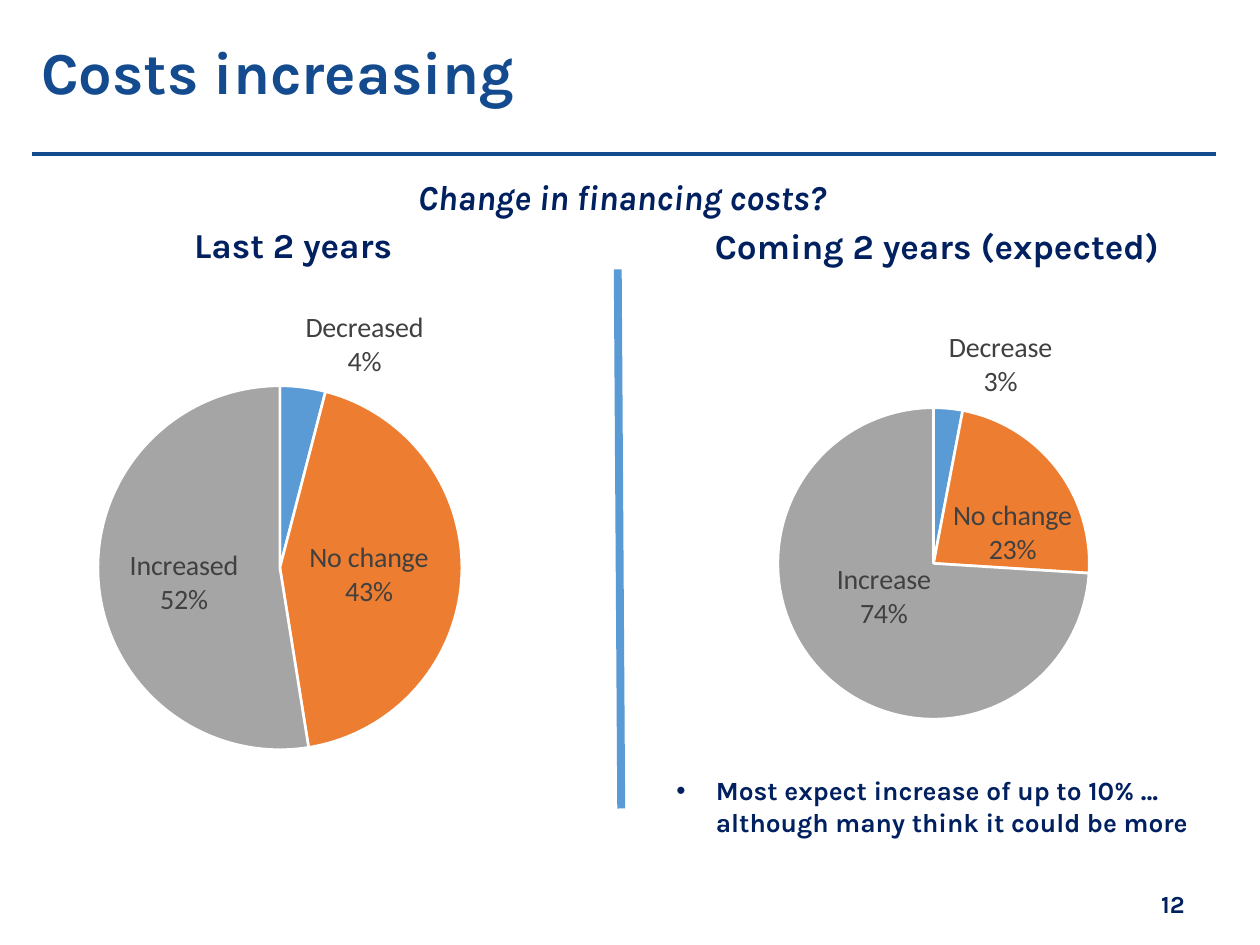
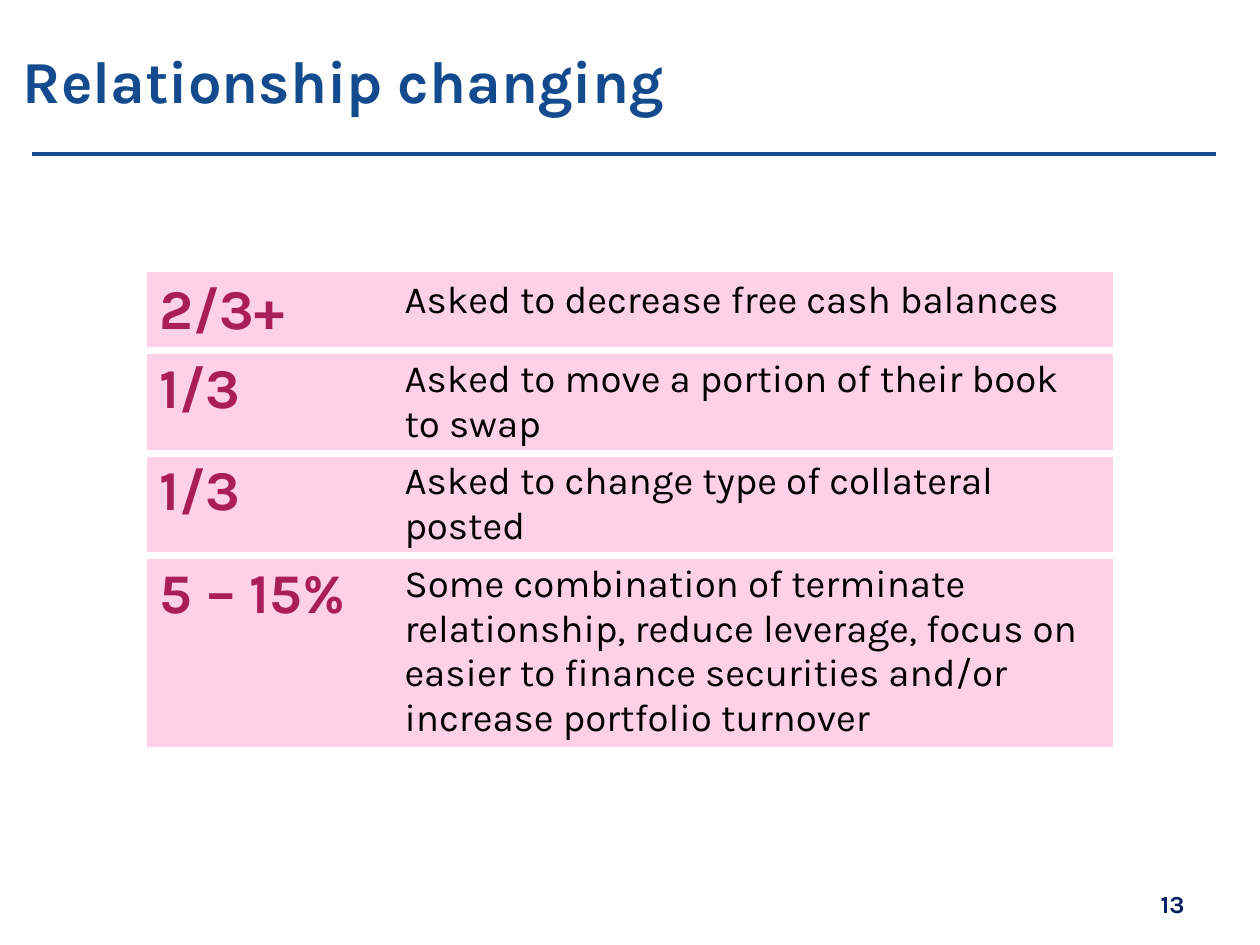
import copy
import dataclasses

import lxml.etree
import pptx
import pptx.chart.data
import pptx.dml.color
import pptx.enum.chart
import pptx.enum.shapes
import pptx.enum.text
import pptx.oxml
import pptx.oxml.ns
import pptx.util

Pt = pptx.util.Pt
qn = pptx.oxml.ns.qn
Align = pptx.enum.text.PP_ALIGN
LabelPosition = pptx.enum.chart.XL_LABEL_POSITION


@dataclasses.dataclass(frozen=True)
class Theme:
    """Colours, fonts and type sizes shared by the slides."""

    title: str = "134B8E"
    navy: str = "002060"
    divider: str = "5B9BD5"
    slices: tuple = ("5B9BD5", "ED7D31", "A5A5A5")
    label: str = "404040"
    berry: str = "A91E59"
    pink: str = "FFD1E8"
    white: str = "FFFFFF"
    black: str = "000000"
    font: str = "Karla"
    chart_font: str = "Calibri"
    title_size: int = 34
    share_size: int = 32
    request_size: int = 22
    heading_size: int = 20
    label_size: int = 16
    note_size: int = 15
    number_size: int = 14


THEME = Theme()


def rgb(colour):
    """Turn a hex string into a colour."""
    return pptx.dml.color.RGBColor.from_string(colour)


def style(font, size, colour, bold=False, italic=False, name=THEME.font):
    """Set the look of a font."""
    font.name, font.size, font.bold, font.italic = name, Pt(size), bold, italic
    font.color.rgb = rgb(colour)


def add_text(page, box, text, size, colour, align=Align.LEFT, italic=False, middle=False):
    """Add one bold paragraph in a box and return the paragraph."""
    frame = page.shapes.add_textbox(*map(Pt, box)).text_frame
    frame.text = text
    frame.word_wrap = True
    if middle:
        frame.vertical_anchor = pptx.enum.text.MSO_ANCHOR.MIDDLE
    para = frame.paragraphs[0]
    para.alignment = align
    for span in para.runs:
        style(span.font, size, colour, True, italic)
    return para


def add_line(page, start, end, colour, width):
    """Add a straight line without shadow."""
    line = page.shapes.add_connector(
        pptx.enum.shapes.MSO_CONNECTOR.STRAIGHT, *map(Pt, (*start, *end))
    )
    line.line.color.rgb = rgb(colour)
    line.line.width = Pt(width)
    lxml.etree.SubElement(line._element.spPr, qn("a:effectLst"))


def add_page(deck, title, corner, number):
    """Add a page with its title, rule and page number."""
    page = deck.slides.add_slide(deck.slide_layouts[6])
    add_line(page, (18, 88), (695, 88), THEME.title, 1.75)
    add_text(page, (522, 502, 162, 29), str(number), THEME.number_size, THEME.navy,
             Align.RIGHT, middle=True)
    para = add_text(page, (*corner, 620, 79), title, THEME.title_size, THEME.title, middle=True)
    para.line_spacing = 0.9
    return page


def manual_layout(settings):
    """Make a chart layout element from its settings."""
    layout = lxml.etree.Element(qn("c:layout"))
    manual = lxml.etree.SubElement(layout, qn("c:manualLayout"))
    for tag, value in settings.items():
        text = value if isinstance(value, str) else f"{value:.4f}"
        lxml.etree.SubElement(manual, qn("c:" + tag)).set("val", text)
    return layout


def place_plot(chart, box, circle):
    """Fix the pie at a left, top and diameter within the chart box."""
    area = chart.element.xpath(".//c:plotArea")[0]
    for old in area.findall(qn("c:layout")):
        area.remove(old)
    left, top, diameter = circle
    width, height = box[2:]
    area.insert(0, manual_layout({
        "layoutTarget": "inner", "xMode": "edge", "yMode": "edge",
        "x": left / width, "y": top / height,
        "w": diameter / width, "h": diameter / height,
    }))


def label_slices(chart, series, box, shifts):
    """Label each slice, the first outside and the others shifted from their centres."""
    labels = series.data_labels
    labels.show_category_name = True
    labels.show_value = True
    labels.number_format = '0"%"'
    labels.number_format_is_linked = False
    labels.position = LabelPosition.CENTER
    style(labels.font, THEME.label_size, THEME.label, name=THEME.chart_font)
    number_format = chart.element.xpath(".//c:dLbls/c:numFmt")[0]
    for index, (right, down) in enumerate(shifts):
        label = series.points[index].data_label
        style(label.font, THEME.label_size, THEME.label, name=THEME.chart_font)
        label.position = LabelPosition.CENTER if index else LabelPosition.OUTSIDE_END
        single = chart.element.xpath(".//c:dLbl")[index]
        single.insert(1, copy.deepcopy(number_format))
        single.insert(1, manual_layout({"x": right / box[2], "y": down / box[3]}))
        single.find(qn("c:showCatName")).set("val", "1")
    for flag in chart.element.xpath(".//c:ser//c:showBubbleSize"):
        separator = lxml.etree.Element(qn("c:separator"))
        separator.text = "\n"
        flag.addnext(separator)
    for flag in chart.element.xpath(".//c:showLeaderLines"):
        flag.set("val", "0")


def add_pie(page, box, circle, shares, shifts):
    """Add a pie of the given shares in a box."""
    data = pptx.chart.data.CategoryChartData(number_format='0"%"')
    data.categories = list(shares)
    data.add_series("Series 1", list(shares.values()))
    chart = page.shapes.add_chart(
        pptx.enum.chart.XL_CHART_TYPE.PIE, *map(Pt, box), data
    ).chart
    chart.has_title = False
    chart.has_legend = False
    style(chart.font, THEME.label_size, THEME.black, name=THEME.chart_font)
    chart.plots[0].vary_by_categories = True
    series = chart.plots[0].series[0]
    for index, colour in enumerate(THEME.slices):
        look = series.points[index].format
        look.fill.solid()
        look.fill.fore_color.rgb = rgb(colour)
        look.line.color.rgb = rgb(THEME.white)
        look.line.width = Pt(1.5)
    label_slices(chart, series, box, shifts)
    place_plot(chart, box, circle)


def add_bullet(page, box, text):
    """Add a bulleted note."""
    para = add_text(page, box, text, THEME.note_size, THEME.navy)
    properties = para._p.get_or_add_pPr()
    properties.set("marL", str(Pt(22.5)))
    properties.set("indent", str(-Pt(22.5)))
    lxml.etree.SubElement(properties, qn("a:buFont")).set("typeface", "Arial")
    lxml.etree.SubElement(properties, qn("a:buChar")).set("char", "•")


def border_cell(cell, ruled):
    """Rule the named sides of a cell in white and clear the others."""
    properties = cell._tc.get_or_add_tcPr()
    for index, side in enumerate(("lnL", "lnR", "lnT", "lnB")):
        rule = lxml.etree.Element(qn("a:" + side))
        if side in ruled:
            rule.set("w", str(Pt(4.5)))
            fill = lxml.etree.SubElement(rule, qn("a:solidFill"))
            lxml.etree.SubElement(fill, qn("a:srgbClr")).set("val", THEME.white)
        else:
            lxml.etree.SubElement(rule, qn("a:noFill"))
        properties.insert(index, rule)


def add_request_table(page, box, widths, heights, requests):
    """Add the table of shares and requests."""
    table = page.shapes.add_table(len(requests), len(widths), *map(Pt, box)).table
    table.first_row = False
    table.horz_banding = False
    for column, width in zip(table.columns, widths):
        column.width = Pt(width)
    looks = (
        (THEME.share_size, THEME.berry, True),
        (THEME.request_size, THEME.black, False),
    )
    for index, (row, height, texts) in enumerate(zip(table.rows, heights, requests)):
        row.height = Pt(height)
        for cell, text, look in zip(row.cells, texts, looks):
            cell.text = text
            cell.margin_bottom = Pt(2)
            style(cell.text_frame.paragraphs[0].runs[0].font, *look)
            cell.fill.solid()
            cell.fill.fore_color.rgb = rgb(THEME.pink)
            border_cell(cell, ("lnT", "lnB") if index else ("lnB",))


def build_costs(deck):
    """Build the page that compares past and expected financing costs."""
    page = add_page(deck, "Costs increasing", (16.5, 3.5), 12)
    headings = (
        ((44.5, 124, 251, 32), "Last 2 years ", False),
        ((399.5, 124.5, 272, 32), "Coming 2 years (expected)", False),
        ((149, 96.5, 413, 32), "Change in financing costs?", True),
    )
    for box, text, italic in headings:
        add_text(page, box, text, THEME.heading_size, THEME.navy, Align.CENTER, italic)
    add_line(page, (353, 154), (355, 462), THEME.divider, 4.5)
    add_bullet(page, (379.5, 439, 340.5, 44),
               "Most expect increase of up to 10% … although many think it could be more")
    add_pie(page, (353, 179, 357, 266.5), (91.5, 54, 178),
            {"Decrease": 3, "No change": 23, "Increase": 74},
            ((0, -1), (10, 10), (4, -11)))
    add_pie(page, (-54, 168.5, 433.5, 270.5), (110, 52, 208),
            {"Decreased": 4, "No change": 43, "Increased": 52},
            ((1, 0), (-1, 2), (-3, 5)))


def build_relationship(deck):
    """Build the page on how the relationship changes."""
    page = add_page(deck, "Relationship changing", (6, 8.5), 13)
    requests = (
        ("2/3+", "Asked to decrease free cash balances"),
        ("1/3", "Asked to move a portion of their book to swap"),
        ("1/3", "Asked to change type of collateral posted"),
        ("5 – 15%", "Some combination of terminate relationship, reduce leverage, "
                    "focus on easier to finance securities and/or increase portfolio turnover"),
    )
    add_request_table(page, (84, 155.5, 552, 273), (140, 412), (45, 58.5, 58.5, 111), requests)


def main():
    """Build and save the deck."""
    deck = pptx.Presentation()
    deck.slide_width, deck.slide_height = Pt(720), Pt(540)
    build_costs(deck)
    build_relationship(deck)
    deck.save("out.pptx")


if __name__ == "__main__":
    main()
